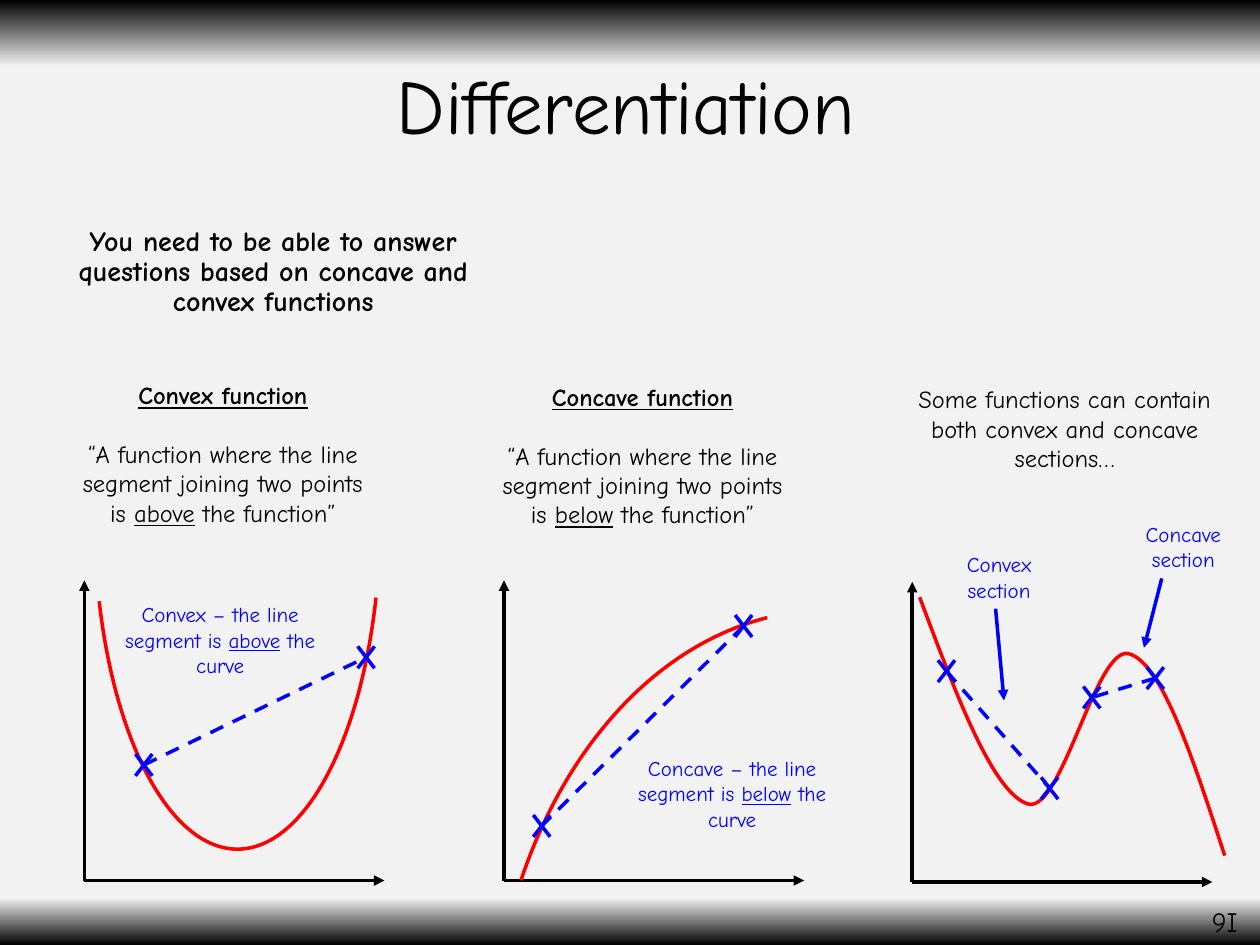
from lxml import etree
from pptx import Presentation
from pptx.dml.color import RGBColor
from pptx.enum import dml, shapes, text
from pptx.oxml.ns import qn
from pptx.util import Cm, Pt

BLACK = RGBColor(0x00, 0x00, 0x00)
GREY = RGBColor(0xF2, 0xF2, 0xF2)
RED = RGBColor(0xFF, 0x00, 0x00)
BLUE = RGBColor(0x00, 0x00, 0xFF)
FONT = "Comic Neue"
STROKE = Pt(2)
AXIS_LENGTH = 6.05
CROSS_HALF_WIDTH, CROSS_HALF_HEIGHT = 0.17, 0.22


def paint_background(slide):
    """Fade from black edges at top and bottom to light grey."""
    fill = slide.background.fill
    fill.gradient()
    fill.gradient_angle = 270
    stops = slide._element.find(".//" + qn("a:gsLst"))
    for stop in list(stops):
        stops.remove(stop)
    for percent, colour in ((0, BLACK), (7, GREY), (95, GREY), (100, BLACK)):
        stop = etree.SubElement(stops, qn("a:gs"), pos=str(percent * 1000))
        etree.SubElement(stop, qn("a:srgbClr"), val=str(colour))


def add_words(slide, box, size, *paragraphs, colour=BLACK, bold_first=False,
              align=text.PP_ALIGN.CENTER, anchor=text.MSO_ANCHOR.TOP,
              line_spacing=None, gap=0):
    """Add a text box; underscores enclose underlined words."""
    frame = slide.shapes.add_textbox(*map(Cm, box)).text_frame
    frame.word_wrap = True
    frame.vertical_anchor = anchor
    for index, words in enumerate(paragraphs):
        paragraph = frame.add_paragraph() if index else frame.paragraphs[0]
        paragraph.alignment = align
        paragraph.line_spacing = line_spacing
        if index:
            paragraph.space_before = Pt(gap)
        font = paragraph.font
        font.name, font.size = FONT, Pt(size)
        font.bold = bold_first and index == 0
        font.color.rgb = colour
        for part, piece in enumerate(words.split("_")):
            if piece:
                run = paragraph.add_run()
                run.text = piece
                if part % 2:
                    run.font.underline = True


def add_line(slide, start, end, colour=BLUE, dashed=False, arrow=False):
    segment = slide.shapes.add_connector(
        shapes.MSO_CONNECTOR.STRAIGHT, *map(Cm, (*start, *end)))
    segment.line.color.rgb = colour
    segment.line.width = STROKE
    if dashed:
        segment.line.dash_style = dml.MSO_LINE.DASH
    if arrow:
        etree.SubElement(segment.line._get_or_add_ln(), qn("a:tailEnd"),
                         type="triangle")
    etree.SubElement(segment._element.spPr, qn("a:effectLst"))


def add_axes(slide, x, y):
    for end in ((x, y - AXIS_LENGTH), (x + AXIS_LENGTH, y)):
        add_line(slide, (x, y), end, BLACK, arrow=True)


def style_curve(curve):
    curve.shadow.inherit = False
    curve.fill.background()
    curve.line.color.rgb = RED
    curve.line.width = STROKE


def add_arc(slide, box, start, end, flipped=False):
    arc = slide.shapes.add_shape(shapes.MSO_SHAPE.ARC, *map(Cm, box))
    arc.adjustments[0], arc.adjustments[1] = start, end
    arc.rotation = 90
    if flipped:
        arc._element.spPr.find(qn("a:xfrm")).set("flipH", "1")
    style_curve(arc)


def add_bezier(slide, start, points):
    """Draw cubic curves, each given by two control points and an end."""
    builder = slide.shapes.build_freeform(*map(Cm, start))
    builder.add_line_segments([(Cm(x), Cm(y)) for x, y in points], close=False)
    curve = builder.convert_to_shape()
    outline = curve._element.find(".//" + qn("a:path"))
    straights = outline.findall(qn("a:lnTo"))
    for first in range(0, len(straights), 3):
        cubic = etree.SubElement(outline, qn("a:cubicBezTo"))
        for straight in straights[first:first + 3]:
            cubic.append(straight[0])
            outline.remove(straight)
    style_curve(curve)


def add_chord(slide, *ends):
    """Join two crossed points with a dashed line."""
    for x, y in ends:
        for rise in (CROSS_HALF_HEIGHT, -CROSS_HALF_HEIGHT):
            add_line(slide, (x - CROSS_HALF_WIDTH, y - rise),
                     (x + CROSS_HALF_WIDTH, y + rise))
    add_line(slide, *ends, dashed=True)


def add_definition(slide, left, top, name, side):
    add_words(slide, (left, top, 6.45, 3.84), 14, f"_{name} function_",
              "“A function where the line segment joining two points is "
              f"_{side}_ the function”", bold_first=True, gap=16.8)


def add_remark(slide, left, top, name, side):
    add_words(slide, (left, top, 4.62, 1.8), 12,
              f"{name} – the line segment is _{side}_ the curve", colour=BLUE)


def add_section_label(slide, box, words, start, end):
    add_words(slide, box, 12, words, colour=BLUE)
    add_line(slide, start, end, arrow=True)


def main():
    deck = Presentation()
    deck.slide_width, deck.slide_height = Cm(25.4), Cm(19.05)
    slide = deck.slides.add_slide(deck.slide_layouts[6])
    paint_background(slide)

    add_words(slide, (0.43, 4.45, 10.16, 13.26), 16,
              "You need to be able to answer questions based on concave and "
              "convex functions", bold_first=True, line_spacing=0.9)
    add_words(slide, (1.68, 0.36, 21.89, 3.68), 44, "Differentiation",
              anchor=text.MSO_ANCHOR.MIDDLE, line_spacing=0.9)
    add_words(slide, (24.18, 18.11, 1.42, 0.94), 16, "9I",
              align=text.PP_ALIGN.LEFT)

    add_definition(slide, 1.27, 7.54, "Convex", "above")
    add_axes(slide, 1.7, 17.75)
    add_arc(slide, (-1.96, 7.49, 13.49, 5.77), 180.55, 34.75)
    add_chord(slide, (2.9, 15.42), (7.38, 13.25))
    add_remark(slide, 2.13, 12.01, "Convex", "above")

    add_definition(slide, 9.73, 7.57, "Concave", "below")
    add_axes(slide, 10.16, 17.75)
    add_arc(slide, (7.37, 14.81, 18.67, 13.64), 4.61, 34.75, flipped=True)
    add_chord(slide, (14.99, 12.62), (10.92, 16.65))
    add_remark(slide, 12.45, 15.11, "Concave", "below")

    add_words(slide, (18.24, 7.62, 6.45, 2.06), 14,
              "Some functions can contain both convex and concave sections…")
    add_axes(slide, 18.39, 17.78)
    add_bezier(slide, (18.54, 12.04), [
        (19.28, 14.02), (20.02, 16), (20.73, 16.21),
        (21.41, 16.38), (22.1, 13), (22.76, 13.18),
        (23.42, 13.36), (24.05, 15.29), (24.69, 17.25)])
    add_chord(slide, (19.08, 13.53), (21.16, 15.89))
    add_chord(slide, (23.29, 13.67), (22.01, 14.06))
    add_section_label(slide, (18.97, 11, 2.34, 1.27), "Convex section",
                      (20.07, 12.27), (20.24, 14.12))
    add_section_label(slide, (22.56, 10.39, 2.59, 1.27), "Concave section",
                      (23.42, 11.66), (23.06, 13.06))
    deck.save("out.pptx")


if __name__ == "__main__":
    main()
